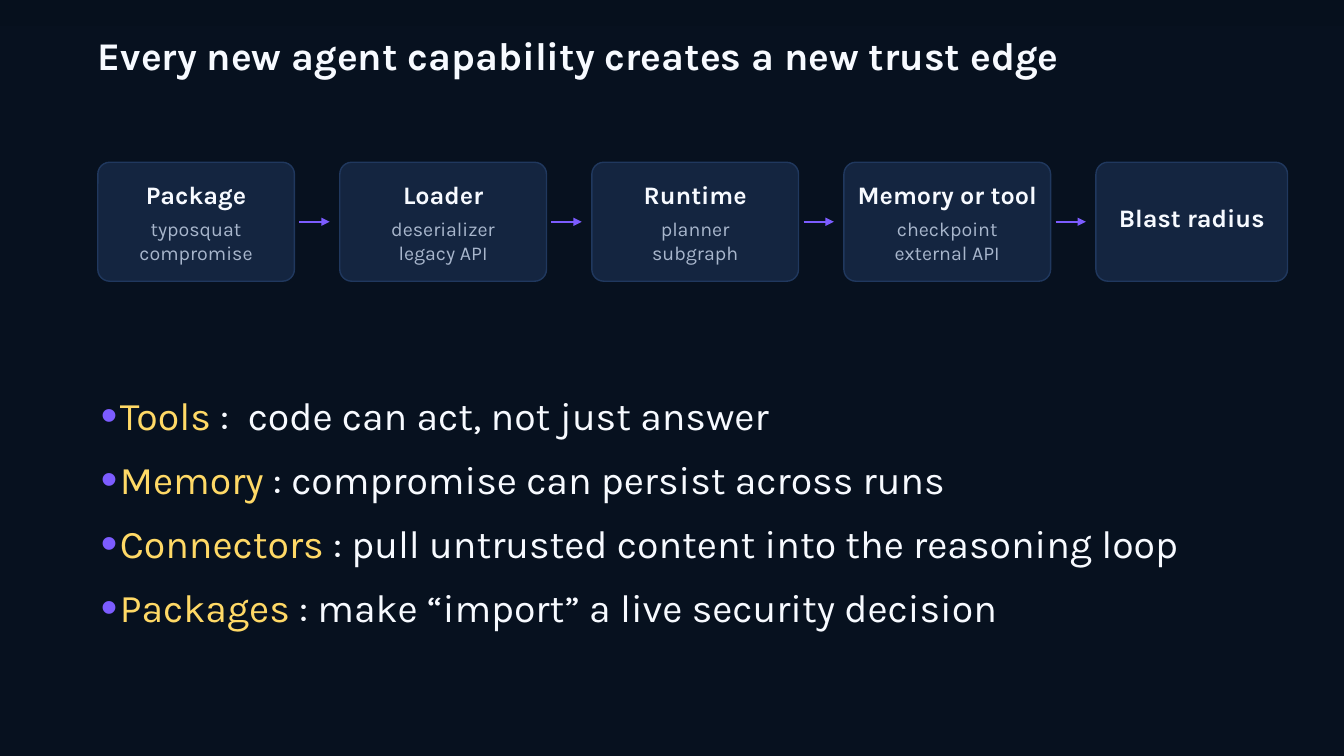
from lxml import etree
from pptx import Presentation
from pptx import util as u
from pptx.dml.color import RGBColor
from pptx.enum import shapes, text
from pptx.oxml import ns

PX = 9144  # 100 px to the inch
WIDTH, HEIGHT = 1333, 750
FONT = "Karla"
BACKDROP, BAND = "07111F", "06101D"
CARD, CARD_EDGE = "142540", "20385E"
WHITE, MUTED, YELLOW, VIOLET = "F7FAFF", "A8B6CC", "FFD966", "7C5CFF"

STAGES = [  # name, details, card width
    ("Package", ["typosquat", "compromise"], 195),
    ("Loader", ["deserializer", "legacy API"], 205),
    ("Runtime", ["planner", "subgraph"], 205),
    ("Memory or tool", ["checkpoint", "external API"], 205),
    ("Blast radius", [], 190),
]
TRUST_EDGES = [
    ("Tools ", ":  code can act, not just answer"),
    ("Memory ", ": compromise can persist across runs"),
    ("Connectors ", ": pull untrusted content into the reasoning loop"),
    ("Packages ", ": make “import” a live security decision"),
]


def px(*lengths):
    return [u.Emu(length * PX) for length in lengths]


def paint(color_format, hex_color):
    color_format.rgb = RGBColor.from_string(hex_color)


def style(font, size, color, bold=False):
    font.name, font.size, font.bold = FONT, u.Pt(size), bold
    paint(font.color, color)


def place(placeholder, box):
    placeholder.left, placeholder.top, placeholder.width, placeholder.height = px(*box)


def prepare_frame(frame, left=0, top=0, right=0, bottom=0):
    frame.word_wrap = True
    frame.auto_size = text.MSO_AUTO_SIZE.NONE
    frame.vertical_anchor = text.MSO_ANCHOR.MIDDLE
    (frame.margin_left, frame.margin_top,
     frame.margin_right, frame.margin_bottom) = px(left, top, right, bottom)


def add_panel(slide, preset, box, fill, edge):
    panel = slide.shapes.add_shape(preset, *px(*box))
    panel.shadow.inherit = False
    panel.fill.solid()
    paint(panel.fill.fore_color, fill)
    paint(panel.line.color, edge)
    panel.line.width = u.Pt(1)
    return panel


def add_backdrop(slide):
    slide.background.fill.solid()
    paint(slide.background.fill.fore_color, BACKDROP)
    add_panel(slide, shapes.MSO_SHAPE.RECTANGLE, (0, 0, WIDTH, 25), BAND, BAND)


def add_title(slide, box, wording):
    title = slide.shapes.title
    place(title, box)
    prepare_frame(title.text_frame)
    title.text_frame.text = wording
    heading = title.text_frame.paragraphs[0]
    heading.alignment = text.PP_ALIGN.LEFT
    style(heading.font, 28, WHITE, bold=True)


def add_stage(slide, box, name, details):
    card = add_panel(slide, shapes.MSO_SHAPE.ROUNDED_RECTANGLE, box, CARD, CARD_EDGE)
    card.adjustments[0] = 0.1
    frame = card.text_frame
    prepare_frame(frame, left=8, right=8, bottom=0 if details else 8)
    frame.text = "\n".join([name, *details])
    for row, line in enumerate(frame.paragraphs):
        line.alignment = text.PP_ALIGN.CENTER
        if row == 0:
            style(line.font, 18, WHITE, bold=True)
        else:
            style(line.font, 14, MUTED)
        if row == 1:
            line.space_before = u.Pt(5.5)


def add_arrow(slide, start, end, y):
    arrow = slide.shapes.add_connector(
        shapes.MSO_CONNECTOR.STRAIGHT, *px(start, y, end, y))
    paint(arrow.line.color, VIOLET)
    arrow.line.width = u.Pt(1.6)
    etree.SubElement(arrow.line._get_or_add_ln(), ns.qn("a:tailEnd"), type="triangle")
    etree.SubElement(arrow._element.spPr, ns.qn("a:effectLst"))


def add_stage_flow(slide, box, gap=45):
    left, top, _, height = box
    for number, (name, details, width) in enumerate(STAGES, 1):
        add_stage(slide, (left, top, width, height), name, details)
        right = left + width
        if number < len(STAGES):
            add_arrow(slide, right + 5, right + 35, top + height // 2)
        left = right + gap


def add_bullet(paragraph, indent):
    properties = paragraph._p.get_or_add_pPr()
    properties.set("marL", str(indent * PX))
    properties.set("indent", str(-indent * PX))
    color = etree.SubElement(properties, ns.qn("a:buClr"))
    etree.SubElement(color, ns.qn("a:srgbClr"), val=VIOLET)
    etree.SubElement(properties, ns.qn("a:buSzPct"), val="120000")
    etree.SubElement(properties, ns.qn("a:buFont"), typeface="Arial")
    etree.SubElement(properties, ns.qn("a:buChar"), char="•")


def add_trust_edges(slide, box):
    body = slide.placeholders[1]
    place(body, box)
    frame = body.text_frame
    prepare_frame(frame)
    for row, (term, meaning) in enumerate(TRUST_EDGES):
        item = frame.add_paragraph() if row else frame.paragraphs[0]
        add_bullet(item, 19)
        item.space_before = u.Pt(12 if row else 0)
        for wording, color in ((term, YELLOW), (meaning, WHITE)):
            run = item.add_run()
            run.text = wording
            style(run.font, 28, color)


def main():
    deck = Presentation()
    deck.slide_width, deck.slide_height = px(WIDTH, HEIGHT)
    slide = deck.slides.add_slide(deck.slide_layouts[1])
    add_backdrop(slide)
    add_title(slide, (97, 32, 972, 45),
              "Every new agent capability creates a new trust edge")
    add_stage_flow(slide, (97, 161, 1180, 118))
    add_trust_edges(slide, (100, 391, 1157, 232))
    deck.save("out.pptx")


if __name__ == "__main__":
    main()
